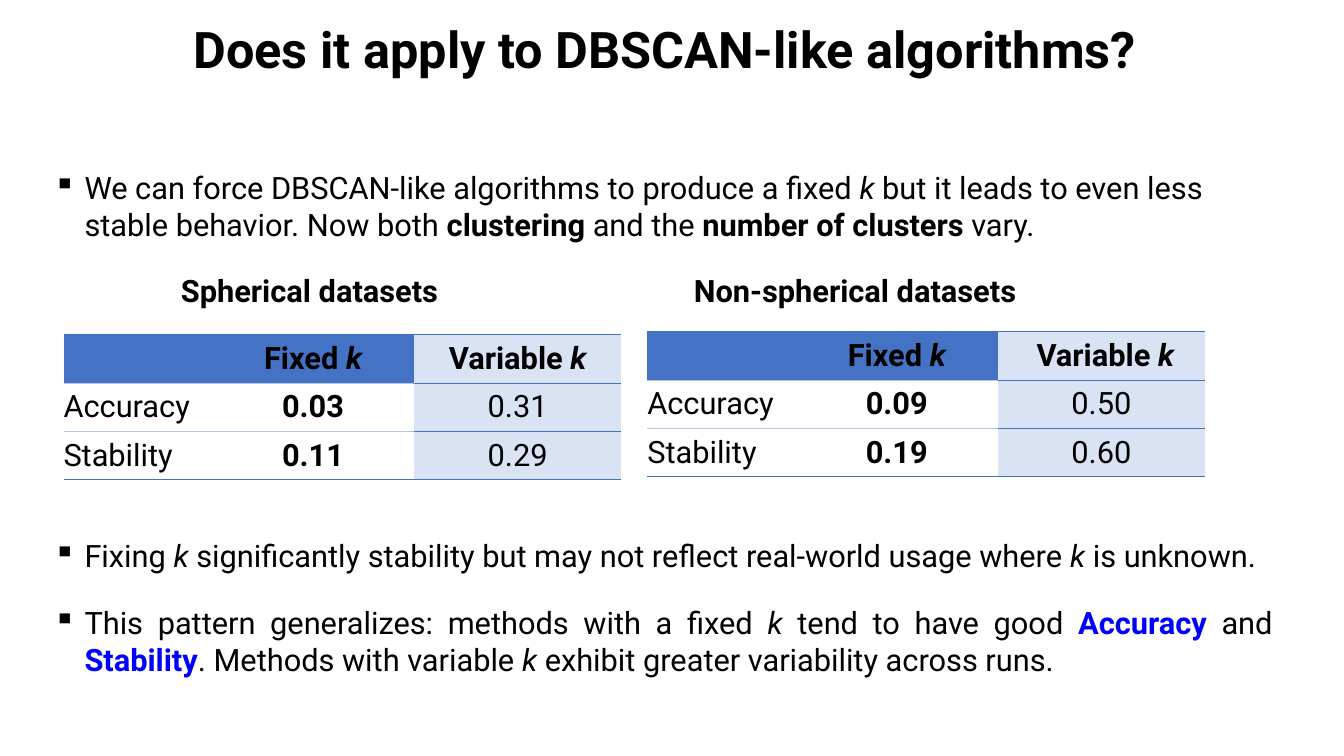
from lxml.etree import SubElement
from pptx import Presentation
from pptx.dml.color import RGBColor
from pptx.enum.text import MSO_ANCHOR, MSO_AUTO_SIZE, PP_ALIGN
from pptx.oxml.ns import qn
from pptx.util import Inches, Pt

BLACK = RGBColor(0x00, 0x00, 0x00)
WHITE = RGBColor(0xFF, 0xFF, 0xFF)
HIGHLIGHT = RGBColor(0x00, 0x00, 0xFF)
BLUE = RGBColor(0x44, 0x72, 0xC4)
PALE_BLUE = RGBColor(0xDA, 0xE3, 0xF3)
RULE_BLUE = RGBColor(0xB4, 0xC7, 0xE7)
NO_TABLE_STYLE = "{2D5ABB26-0587-4C30-8999-92F81FD0307C}"


def add_runs(paragraph, pieces, size=22):
    for text, style in pieces:
        run = paragraph.add_run()
        run.text = text
        run.font.name = "Roboto"
        run.font.size = Pt(size)
        run.font.bold = style in ("bold", "bold italic", "highlight")
        run.font.italic = style in ("italic", "bold italic")
        run.font.color.rgb = HIGHLIGHT if style == "highlight" else BLACK


def add_rule(cell, edge, color):
    line = SubElement(cell._tc.get_or_add_tcPr(), qn(f"a:{edge}"), w=str(Pt(0.75)))
    fill = SubElement(line, qn("a:solidFill"))
    SubElement(fill, qn("a:srgbClr"), val=str(color))


presentation = Presentation()
presentation.slide_width = Inches(13.33)
presentation.slide_height = Inches(7.5)
slide = presentation.slides.add_slide(presentation.slide_layouts[5])

title = slide.shapes.title
title.left, title.top = Inches(0.17), Inches(0.12)
title.width, title.height = Inches(12.85), Inches(0.71)
title.text_frame.auto_size = MSO_AUTO_SIZE.NONE
title.text_frame.vertical_anchor = MSO_ANCHOR.MIDDLE
title.text_frame.paragraphs[0].alignment = PP_ALIGN.CENTER
add_runs(title.text_frame.paragraphs[0],
         [("Does it apply to DBSCAN-like algorithms?", "bold")], 36)

forcing_k = [
    ("We can force DBSCAN-like algorithms to produce a fixed ", ""), ("k ", "italic"),
    ("but it leads to even less stable behavior. Now both ", ""), ("clustering", "bold"),
    (" and the ", ""), ("number of clusters", "bold"), (" vary.", ""),
]
fixing_k = [
    ("Fixing ", ""), ("k", "italic"),
    (" significantly stability but may not reflect real-world usage where ", ""),
    ("k ", "italic"), ("is unknown.", ""),
]
pattern = [
    ("This pattern generalizes: methods with a fixed ", ""), ("k ", "italic"),
    ("tend to have good ", ""), ("Accuracy", "highlight"), (" and ", ""),
    ("Stability", "highlight"), (". Methods with variable ", ""), ("k ", "italic"),
    ("exhibit greater variability across runs.", ""),
]
bullet_groups = [
    (1.62, 0.85, PP_ALIGN.LEFT, [forcing_k]),
    (5.28, 1.52, PP_ALIGN.JUSTIFY, [fixing_k, pattern]),
]
for top, height, alignment, points in bullet_groups:
    body = slide.shapes.add_textbox(
        Inches(0.43), Inches(top), Inches(12.29), Inches(height)).text_frame
    body.word_wrap = True
    for index, point in enumerate(points):
        paragraph = body.add_paragraph() if index else body.paragraphs[0]
        properties = paragraph._p.get_or_add_pPr()
        properties.set("marL", str(Inches(0.31)))
        properties.set("indent", str(-Inches(0.31)))
        SubElement(properties, qn("a:buChar"), char="▪")
        paragraph.alignment = alignment
        paragraph.space_before = Pt(15 if index else 0)
        paragraph.space_after = Pt(6)
        add_runs(paragraph, point)

datasets = [
    ("Spherical datasets", 3.07, 0.63, 3.32, "Variable ",
     [("0.03", "0.31"), ("0.11", "0.29")]),
    ("Non-spherical datasets", 8.48, 6.42, 3.29, " Variable ",
     [("0.09", "0.50"), ("0.19", "0.60")]),
]
for heading, center, left, top, variable, scores in datasets:
    caption = slide.shapes.add_textbox(
        Inches(center - 2), Inches(2.65), Inches(4), Inches(0.46)).text_frame
    caption.word_wrap = True
    caption.paragraphs[0].alignment = PP_ALIGN.CENTER
    add_runs(caption.paragraphs[0], [(heading, "bold")])

    results = slide.shapes.add_table(
        3, 3, Inches(left), Inches(top), Inches(5.53), Inches(1.44)).table
    results.first_row = False
    results.horz_banding = False
    results._tbl.tblPr.find(qn("a:tableStyleId")).text = NO_TABLE_STYLE
    for column, width in zip(results.columns, (1.47, 2.01, 2.05)):
        column.width = Inches(width)

    rows = [[[], [("Fixed ", "bold"), ("k", "bold italic")],
             [(variable, "bold"), ("k", "bold italic")]]]
    for measure, (fixed_score, variable_score) in zip(("Accuracy", "Stability"), scores):
        rows.append([[(measure, "")], [(fixed_score, "bold")], [(variable_score, "")]])

    for row, contents in enumerate(rows):
        results.rows[row].height = Inches(0.48)
        for column, pieces in enumerate(contents):
            cell = results.cell(row, column)
            cell.margin_left = cell.margin_right = 0
            cell.margin_top = cell.margin_bottom = 0
            cell.vertical_anchor = MSO_ANCHOR.MIDDLE
            inner_rule = BLUE if column == 2 else RULE_BLUE
            add_rule(cell, "lnT", BLUE if row == 0 else inner_rule)
            add_rule(cell, "lnB", BLUE if row == 2 else inner_rule)
            cell.fill.solid()
            if column == 2:
                cell.fill.fore_color.rgb = PALE_BLUE
            else:
                cell.fill.fore_color.rgb = WHITE if row else BLUE
            paragraph = cell.text_frame.paragraphs[0]
            paragraph.alignment = PP_ALIGN.CENTER if column else PP_ALIGN.LEFT
            add_runs(paragraph, pieces)

presentation.save("out.pptx")
